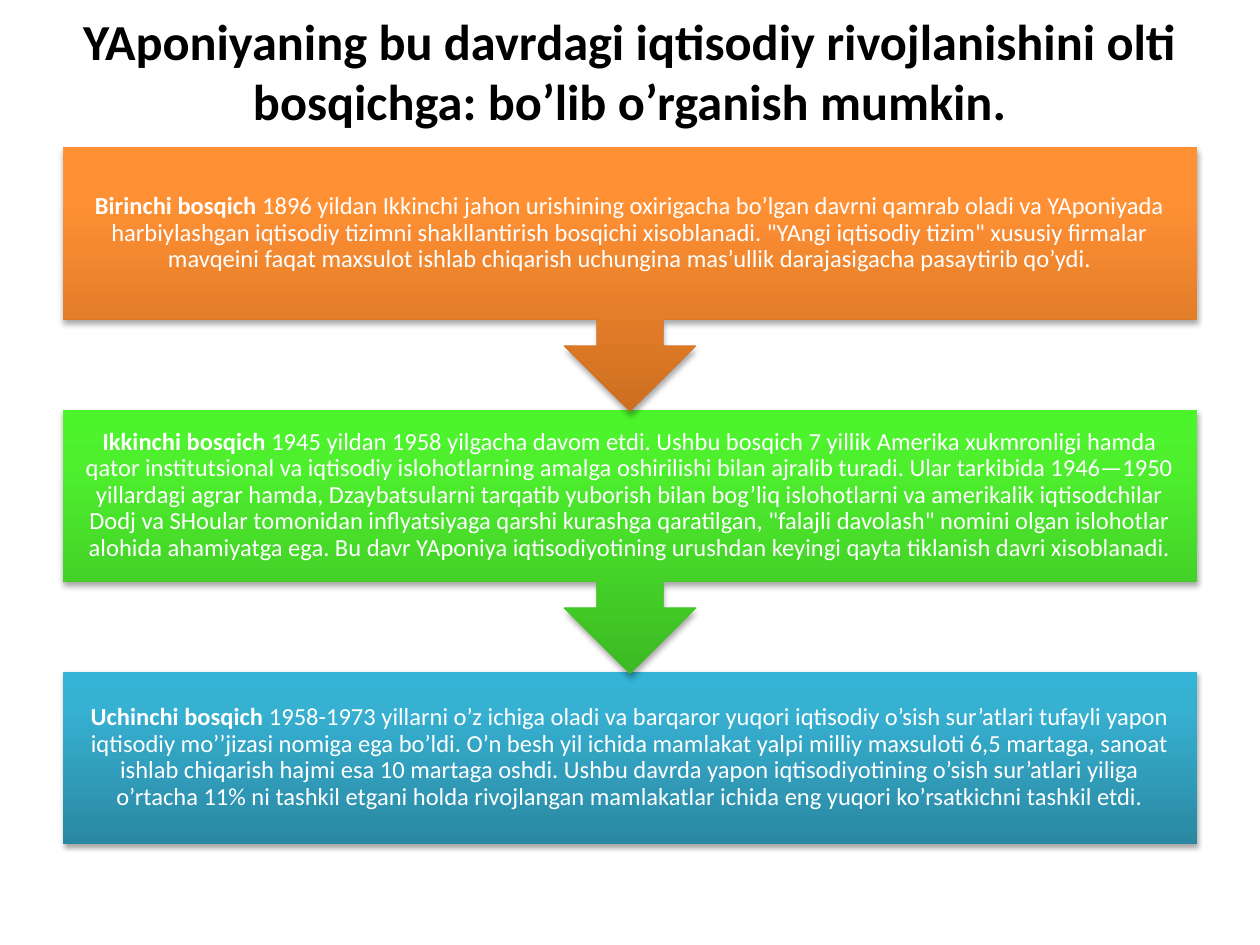
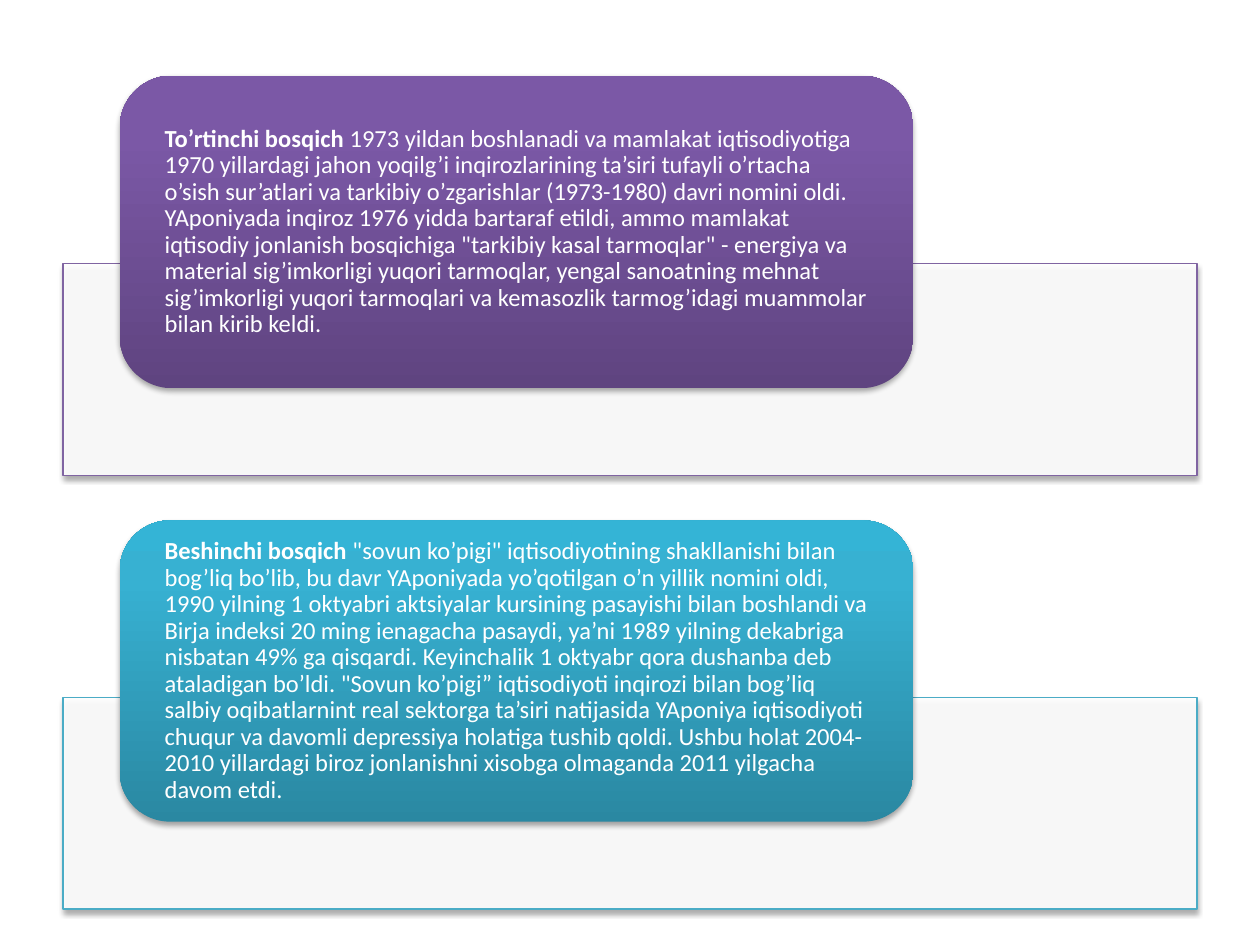
"""Builds two slides on the stages of Japan's economic development."""
import pptx
import pptx.dml.color
import pptx.enum.shapes
import pptx.enum.text
import pptx.oxml
import pptx.oxml.ns
import pptx.util

Pt = pptx.util.Pt
RGB = pptx.dml.color.RGBColor.from_string
SHAPE = pptx.enum.shapes.MSO_SHAPE
ALIGN = pptx.enum.text.PP_ALIGN
MIDDLE = pptx.enum.text.MSO_ANCHOR.MIDDLE
qn = pptx.oxml.ns.qn
NS = pptx.oxml.ns.nsdecls("a")

TITLE = "YAponiyaning bu davrdagi iqtisodiy rivojlanishini olti bosqichga: bo’lib o’rganish mumkin."

FLOW_STAGES = [
    ("Birinchi bosqich",
     " 1896 yildan Ikkinchi jahon urishining oxirigacha bo’lgan davrni qamrab oladi va YAponiyada "
     "harbiylashgan iqtisodiy tizimni shakllantirish bosqichi xisoblanadi. \"YAngi iqtisodiy tizim\" "
     "xususiy firmalar mavqeini faqat maxsulot ishlab chiqarish uchungina mas’ullik darajasigacha "
     "pasaytirib qo’ydi.", "orange"),
    ("Ikkinchi bosqich",
     " 1945 yildan 1958 yilgacha davom etdi. Ushbu bosqich 7 yillik Amerika xukmronligi hamda qator "
     "institutsional va iqtisodiy islohotlarning amalga oshirilishi bilan ajralib turadi. Ular tarkibida "
     "1946—1950 yillardagi agrar hamda, Dzaybatsularni tarqatib yuborish bilan bog’liq islohotlarni va "
     "amerikalik iqtisodchilar Dodj va SHoular tomonidan inflyatsiyaga qarshi kurashga qaratilgan, "
     "\"falajli davolash\" nomini olgan islohotlar alohida ahamiyatga ega. Bu davr YAponiya "
     "iqtisodiyotining urushdan keyingi qayta tiklanish davri xisoblanadi.", "green"),
    ("Uchinchi bosqich",
     " 1958-1973 yillarni o’z ichiga oladi va barqaror yuqori iqtisodiy o’sish sur’atlari tufayli yapon "
     "iqtisodiy mo’’jizasi nomiga ega bo’ldi. O’n besh yil ichida mamlakat yalpi milliy maxsuloti 6,5 "
     "martaga, sanoat ishlab chiqarish hajmi esa 10 martaga oshdi. Ushbu davrda yapon iqtisodiyotining "
     "o’sish sur’atlari yiliga o’rtacha 11% ni tashkil etgani holda rivojlangan mamlakatlar ichida eng "
     "yuqori ko’rsatkichni tashkil etdi.", "blue"),
]

CARD_STAGES = [
    ("To’rtinchi bosqich",
     " 1973 yildan boshlanadi va mamlakat iqtisodiyotiga 1970 yillardagi jahon yoqilg’i inqirozlarining "
     "ta’siri tufayli o’rtacha o’sish sur’atlari va tarkibiy o’zgarishlar (1973-1980) davri nomini oldi. "
     "YAponiyada inqiroz 1976 yidda bartaraf etildi, ammo mamlakat iqtisodiy jonlanish bosqichiga "
     "\"tarkibiy kasal tarmoqlar\" - energiya va material sig’imkorligi yuqori tarmoqlar, yengal "
     "sanoatning mehnat sig’imkorligi yuqori tarmoqlari va kemasozlik tarmog’idagi muammolar bilan "
     "kirib keldi.", "purple", 43.2, 178.6),
    ("Beshinchi bosqich",
     " \"sovun ko’pigi\" iqtisodiyotining shakllanishi bilan bog’liq bo’lib, bu davr YAponiyada "
     "yo’qotilgan o’n yillik nomini oldi, 1990 yilning 1 oktyabri aktsiyalar kursining pasayishi bilan "
     "boshlandi va Birja indeksi 20 ming ienagacha pasaydi, ya’ni 1989 yilning dekabriga nisbatan 49% "
     "ga qisqardi. Keyinchalik 1 oktyabr qora dushanba deb ataladigan bo’ldi. \"Sovun ko’pigi” "
     "iqtisodiyoti inqirozi bilan bog’liq salbiy oqibatlarnint real sektorga ta’siri natijasida "
     "YAponiya iqtisodiyoti chuqur va davomli depressiya holatiga tushib qoldi. Ushbu holat 2004-2010 "
     "yillardagi biroz jonlanishni xisobga olmaganda 2011 yilgacha davom etdi.", "blue", 297.4, 172.1),
]

COLORS = {"text": "FFFFFF", "title": "000000", "panel": "FFFFFF",
          "purple_line": "8064A2", "blue_line": "4BACC6"}
GRADIENTS = {
    "orange": {0: "CC6E20", 80: "FF9034", 100: "FF9136"},
    "green": {0: "3CB923", 80: "4EF02E", 100: "4CF52A"},
    "blue": {0: "2A88A2", 80: "37B1D2", 100: "34B4D6"},
    "purple": {0: "5F4480", 80: "7B58A6", 100: "7C57A8"},
}
LEFT, WIDTH = 36, 648
FLOW_TOP, FLOW_STEP = 84.2, 149.8
CALLOUT_H, BOX_H = 151.2, 98.3
CARD_LEFT, CARD_W, CARD_PAD = 68.4, 453.6, 8.7
PANEL_H, PANEL_OVERLAP = 121, 71.1


def add_shape(slide, kind, *box):
    s = slide.shapes.add_shape(kind, *map(Pt, box))
    s.line.fill.background()
    s.shadow.inherit = False
    s._element.spPr.find(qn("a:effectLst")).append(pptx.oxml.parse_xml(
        f'<a:outerShdw {NS} blurRad="{Pt(3.1)}" dist="{Pt(1.8)}" dir="5400000" rotWithShape="0">'
        '<a:srgbClr val="000000"><a:alpha val="35000"/></a:srgbClr></a:outerShdw>'))
    return s


def fill_gradient(s, name):
    s.fill.gradient()
    s.fill.gradient_angle = 90
    grad = s._element.spPr.find(qn("a:gradFill"))
    grad.set("rotWithShape", "0")
    stops = grad.find(qn("a:gsLst"))
    for gs in list(stops):
        stops.remove(gs)
    for pos, color in GRADIENTS[name].items():
        stops.append(pptx.oxml.parse_xml(
            f'<a:gs {NS} pos="{pos * 1000}"><a:srgbClr val="{color}"/></a:gs>'))


def add_text(slide, box, runs, size, color, align, margins, spacing=1.0):
    s = slide.shapes.add_textbox(*map(Pt, box))
    tf = s.text_frame
    names = ("margin_left", "margin_top", "margin_right", "margin_bottom")
    frame = {"word_wrap": True, "vertical_anchor": MIDDLE, **dict(zip(names, map(Pt, margins)))}
    for key, value in frame.items():
        setattr(tf, key, value)
    p = tf.paragraphs[0]
    p.alignment, p.line_spacing = align, spacing
    for text, bold in runs:
        r = p.add_run()
        r.text = text
        for key, value in {"name": "Calibri", "size": Pt(size), "bold": bold}.items():
            setattr(r.font, key, value)
        r.font.color.rgb = RGB(COLORS[color])


def add_stage_text(slide, box, name, body, align, margins):
    add_text(slide, box, [(name, True), (body, False)], 14, "text", align, margins, 0.9)


def build_flow(slide):
    add_text(slide, (LEFT, 21.6, WIDTH, 68.4), [(TITLE, True)], 28.8, "title",
             ALIGN.CENTER, (7.2, 3.6, 7.2, 35))
    last = len(FLOW_STAGES) - 1
    for i, (name, body, color) in reversed(list(enumerate(FLOW_STAGES))):
        top = FLOW_TOP + i * FLOW_STEP
        if i == last:
            s = add_shape(slide, SHAPE.RECTANGLE, LEFT, top, WIDTH, BOX_H)
        else:
            s = add_shape(slide, SHAPE.UP_ARROW_CALLOUT, LEFT, top, WIDTH, CALLOUT_H)
            s.rotation = 180
        fill_gradient(s, color)
        add_stage_text(slide, (LEFT, top, WIDTH, BOX_H), name, body, ALIGN.CENTER, (7.9,) * 4)


def build_cards(slide):
    for name, body, color, top, height in CARD_STAGES:
        panel = add_shape(slide, SHAPE.RECTANGLE, LEFT, top + height - PANEL_OVERLAP, WIDTH, PANEL_H)
        panel.fill.solid()
        panel.fill.fore_color.rgb = RGB(COLORS["panel"])
        panel._element.spPr.find(qn("a:solidFill"))[0].append(
            pptx.oxml.parse_xml(f'<a:alpha {NS} val="90000"/>'))
        panel.line.color.rgb = RGB(COLORS[color + "_line"])
        panel.line.width = Pt(0.75)
        card = add_shape(slide, SHAPE.ROUNDED_RECTANGLE, CARD_LEFT, top, CARD_W, height)
        fill_gradient(card, color)
        box = (CARD_LEFT + CARD_PAD, top + CARD_PAD, CARD_W - 2 * CARD_PAD, height - 2 * CARD_PAD)
        add_stage_text(slide, box, name, body, ALIGN.LEFT, (17, 0, 17, 0))


def main():
    prs = pptx.Presentation()
    prs.slide_width, prs.slide_height = Pt(720), Pt(540)
    for build in (build_flow, build_cards):
        build(prs.slides.add_slide(prs.slide_layouts[6]))
    prs.save("out.pptx")


if __name__ == "__main__":
    main()
